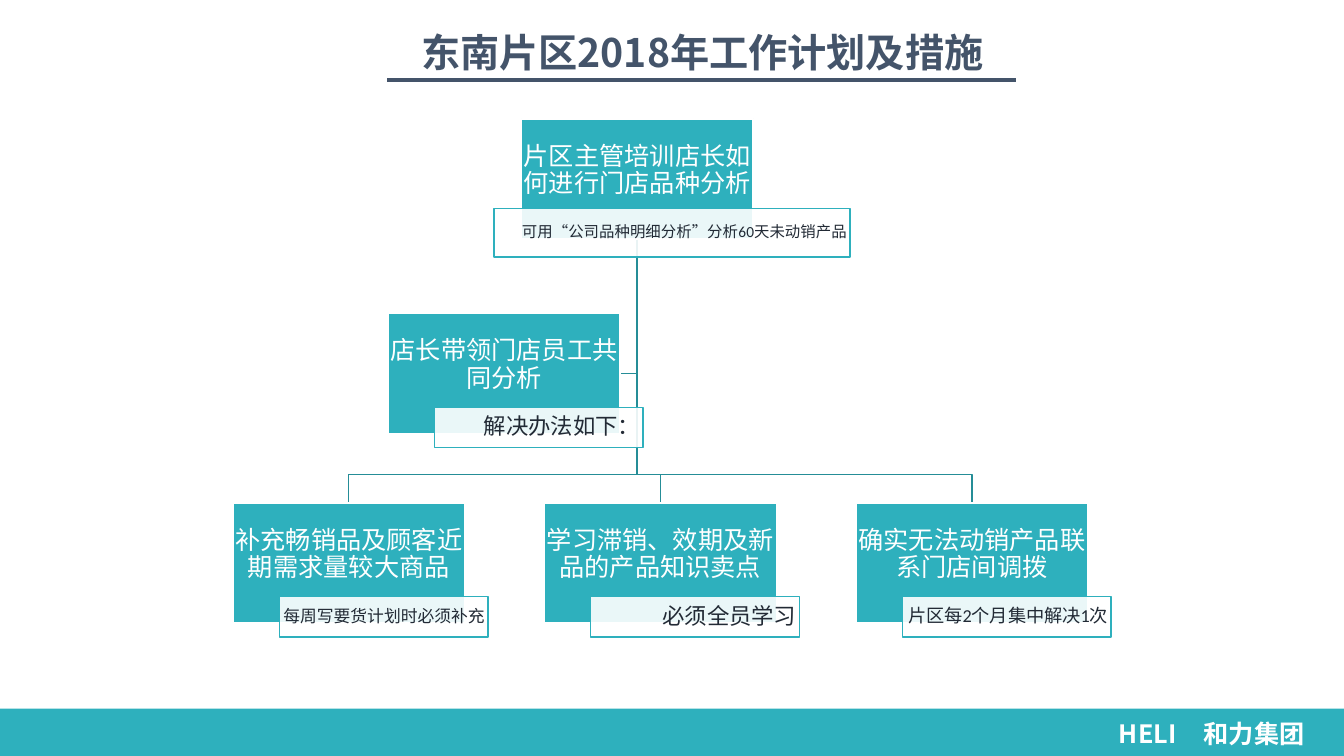
from lxml.etree import SubElement
from pptx import Presentation
from pptx.dml.color import RGBColor
from pptx.enum.shapes import MSO_CONNECTOR, MSO_SHAPE
from pptx.enum.text import MSO_ANCHOR, PP_ALIGN
from pptx.oxml.ns import qn
from pptx.util import Inches, Pt

TEAL = RGBColor(0x2E, 0xB0, 0xBD)
DARK_TEAL = RGBColor(0x25, 0x8D, 0x97)
SLATE = RGBColor(0x44, 0x54, 0x6A)
INK = RGBColor(0x22, 0x2A, 0x35)
WHITE = RGBColor(0xFF, 0xFF, 0xFF)
CJK_FONT = "Noto Sans CJK SC"
BODY_FONT = "Calibri"

TITLE = "东南片区2018年工作计划及措施"
BRAND = [("HELI", 11, 0.94), ("和力集团", 11.84, 1.4)]
ROOT = ("片区主管培训店长如何进行门店品种分析", "可用“公司品种明细分析”分析60天未动销产品", 11)
ASSISTANT = ("店长带领门店员工共同分析", "解决办法如下：", 16)
ACTIONS = [
    ("补充畅销品及顾客近期需求量较大商品", "每周写要货计划时必须补充", 12),
    ("学习滞销、效期及新品的产品知识卖点", "必须全员学习", 16),
    ("确实无法动销产品联系门店间调拨", "片区每2个月集中解决1次", 13),
]

BOX_WIDTH, BOX_HEIGHT = 2.3, 1.19
SMALL_NOTE = (0.46, 0.93, 2.07, 0.4)
ROOT_NOTE = (-0.27, 0.89, 3.53, 0.48)
ROOT_LEFT, ROOT_TOP = 5.17, 1.18
ASSISTANT_LEFT, ASSISTANT_TOP = 3.85, 3.11
ACTION_LEFT, ACTION_TOP, ACTION_STEP = 2.31, 4.99, 3.09
BRANCH_TOP = 4.71


def write(shape, text, size, color, font=BODY_FONT, bold=False,
          align=PP_ALIGN.CENTER, spacing=0.9, margins=(0.01, 0.01, 0.01, 0.17)):
    frame = shape.text_frame
    frame.word_wrap = True
    frame.vertical_anchor = MSO_ANCHOR.MIDDLE
    (frame.margin_left, frame.margin_top,
     frame.margin_right, frame.margin_bottom) = map(Inches, margins)
    para = frame.paragraphs[0]
    para.alignment = align
    para.line_spacing = spacing
    span = para.add_run()
    span.text = text
    span.font.name = font
    span.font.size = Pt(size)
    span.font.bold = bold
    span.font.color.rgb = color
    SubElement(span.font._element, qn("a:ea")).set("typeface", CJK_FONT)


def add_box(page, place, fill, line=None):
    box = page.shapes.add_shape(MSO_SHAPE.RECTANGLE, *map(Inches, place))
    box.shadow.inherit = False
    box.fill.solid()
    box.fill.fore_color.rgb = fill
    if line is None:
        box.line.fill.background()
    else:
        box.line.color.rgb = line
        box.line.width = Pt(1)
    return box


def add_node(page, content, left, top, note_place=SMALL_NOTE):
    heading, remark, size = content
    box = add_box(page, (left, top, BOX_WIDTH, BOX_HEIGHT), TEAL, WHITE)
    write(box, heading, 18, WHITE)
    shift_x, shift_y, width, height = note_place
    note = add_box(page, (left + shift_x, top + shift_y, width, height), WHITE, TEAL)
    color = note.fill._xPr.find(qn("a:solidFill"))[0]
    SubElement(color, qn("a:alpha")).set("val", "90000")
    write(note, remark, size, INK, align=PP_ALIGN.RIGHT,
          margins=(0.03, 0.01, 0.03, 0.01))


def add_link(page, points):
    corners = [(Inches(x), Inches(y)) for x, y in points]
    builder = page.shapes.build_freeform(*corners[0])
    builder.add_line_segments(corners[1:], close=False)
    link = builder.convert_to_shape()
    link.shadow.inherit = False
    link.fill.background()
    link.line.color.rgb = DARK_TEAL
    link.line.width = Pt(1)


def add_chart_of_steps(page):
    trunk = ROOT_LEFT + BOX_WIDTH / 2
    start = (trunk, ROOT_TOP + BOX_HEIGHT)
    assistant_middle = ASSISTANT_TOP + BOX_HEIGHT / 2
    lefts = [ACTION_LEFT + ACTION_STEP * i for i in range(len(ACTIONS))]

    add_link(page, [start, (trunk, assistant_middle),
                    (ASSISTANT_LEFT + BOX_WIDTH, assistant_middle)])
    for left in lefts:
        center = left + BOX_WIDTH / 2
        add_link(page, [start, (trunk, BRANCH_TOP),
                        (center, BRANCH_TOP), (center, ACTION_TOP)])

    add_node(page, ROOT, ROOT_LEFT, ROOT_TOP, ROOT_NOTE)
    for action, left in zip(ACTIONS, lefts):
        add_node(page, action, left, ACTION_TOP)
    add_node(page, ASSISTANT, ASSISTANT_LEFT, ASSISTANT_TOP)


def add_frame(page):
    rule = page.shapes.add_connector(
        MSO_CONNECTOR.STRAIGHT, *map(Inches, (3.84, 0.79, 10.08, 0.79)))
    rule.line.color.rgb = SLATE
    rule.line.width = Pt(3)
    SubElement(rule._element.spPr, qn("a:effectLst"))
    title = page.shapes.add_textbox(*map(Inches, (2.74, 0.27, 8.45, 0.55)))
    write(title, TITLE, 28, SLATE, CJK_FONT, True, margins=(0, 0.05, 0, 0.05))
    add_box(page, (0, 7.03, 13.33, 0.47), TEAL)
    for text, left, width in BRAND:
        label = page.shapes.add_textbox(*map(Inches, (left, 7.08, width, 0.4)))
        write(label, text, 18, WHITE, CJK_FONT, True, PP_ALIGN.LEFT, 1,
              (0.1, 0.05, 0, 0.05))


def main():
    deck = Presentation()
    deck.slide_width, deck.slide_height = Inches(13.33), Inches(7.5)
    page = deck.slides.add_slide(deck.slide_layouts[6])
    add_frame(page)
    add_chart_of_steps(page)
    deck.save("out.pptx")


if __name__ == "__main__":
    main()
